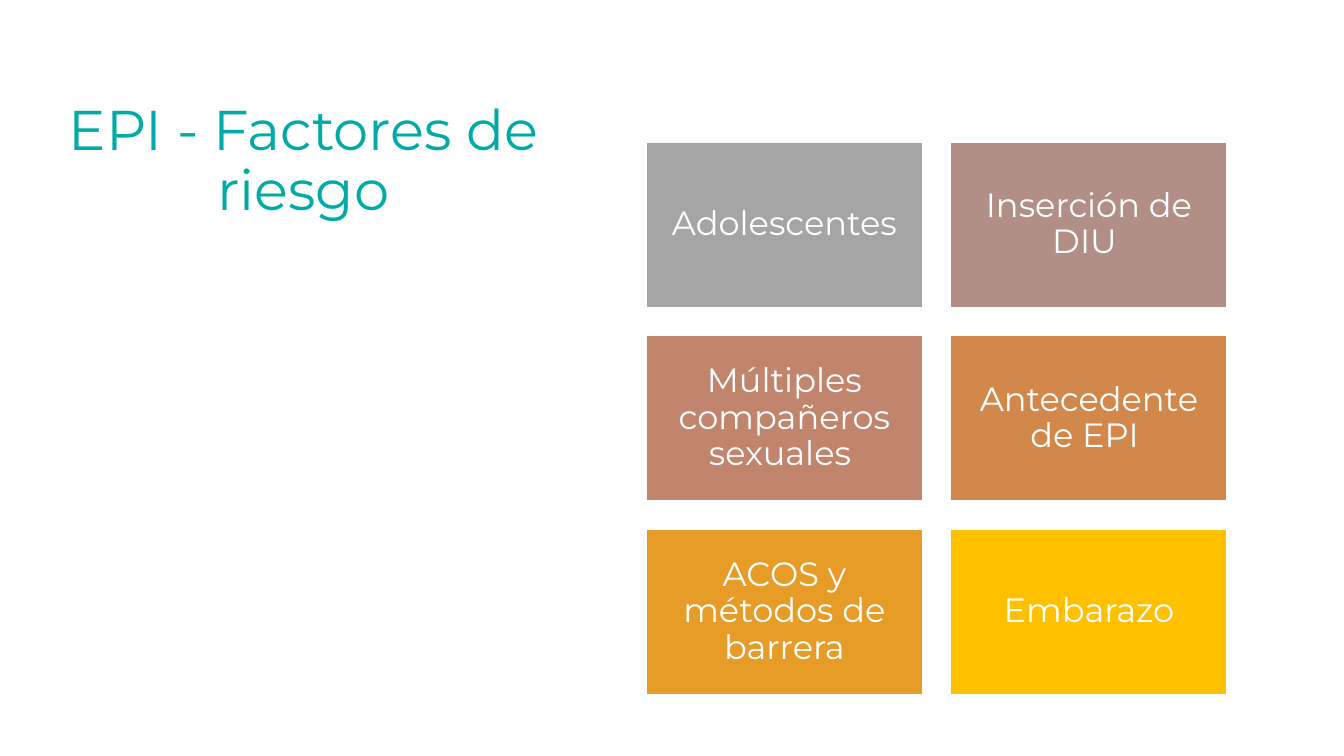
"""Build the slide on risk factors for EPI."""
import dataclasses

import pptx
import pptx.dml.color
import pptx.enum.shapes
import pptx.enum.text
import pptx.presentation
import pptx.slide
import pptx.text.text
import pptx.util

Inches = pptx.util.Inches


@dataclasses.dataclass(frozen=True)
class Theme:
    """Hold the colours, font and type sizes of the slide."""

    font: str = "Montserrat"
    heading: str = "00AAA7"
    white: str = "FFFFFF"
    heading_size: int = 40
    factor_size: int = 24
    line_spacing: float = 0.9


@dataclasses.dataclass(frozen=True)
class RiskFactor:
    """Describe one tile of the grid."""

    label: str
    fill: str


@dataclasses.dataclass(frozen=True)
class Grid:
    """Place tiles row by row, in inches."""

    left: float = 6.41
    top: float = 1.41
    width: float = 2.74
    height: float = 1.64
    gap: float = 0.28
    columns: int = 2


THEME = Theme()
GRID = Grid()
RISK_FACTORS = (
    RiskFactor("Adolescentes", "A5A5A5"),
    RiskFactor("Inserción de DIU ", "B18F87"),
    RiskFactor("Múltiples compañeros sexuales ", "C1846C"),
    RiskFactor("Antecedente de EPI ", "D1884A"),
    RiskFactor("ACOS y métodos de barrera", "E69C27"),
    RiskFactor("Embarazo", "FFC000"),
)


def rgb(code: str) -> pptx.dml.color.RGBColor:
    """Turn a hexadecimal code into a colour."""
    return pptx.dml.color.RGBColor.from_string(code)


def write(frame: pptx.text.text.TextFrame, text: str, size: int, color: str) -> None:
    """Write one centred paragraph in the middle of a frame."""
    frame.word_wrap = True
    frame.auto_size = pptx.enum.text.MSO_AUTO_SIZE.NONE
    frame.vertical_anchor = pptx.enum.text.MSO_ANCHOR.MIDDLE
    paragraph = frame.paragraphs[0]
    paragraph.alignment = pptx.enum.text.PP_ALIGN.CENTER
    paragraph.line_spacing = THEME.line_spacing
    paragraph.space_before = pptx.util.Pt(0)
    run = paragraph.add_run()
    run.text = text
    run.font.name = THEME.font
    run.font.size = pptx.util.Pt(size)
    run.font.color.rgb = rgb(color)


def add_heading(slide: pptx.slide.Slide) -> None:
    """Move the title placeholder and fill it."""
    heading = slide.shapes.title
    heading.left, heading.top = Inches(0.24), Inches(0.6)
    heading.width, heading.height = Inches(5.54), Inches(2.02)
    write(heading.text_frame, "EPI - Factores de riesgo", THEME.heading_size, THEME.heading)


def add_risk_factor(slide: pptx.slide.Slide, index: int, factor: RiskFactor) -> None:
    """Draw one tile at its place in the grid."""
    row, column = divmod(index, GRID.columns)
    tile = slide.shapes.add_shape(
        pptx.enum.shapes.MSO_SHAPE.RECTANGLE,
        Inches(GRID.left + column * (GRID.width + GRID.gap)),
        Inches(GRID.top + row * (GRID.height + GRID.gap)),
        Inches(GRID.width),
        Inches(GRID.height),
    )
    tile.shadow.inherit = False
    tile.fill.solid()
    tile.fill.fore_color.rgb = rgb(factor.fill)
    tile.line.color.rgb = rgb(THEME.white)
    tile.line.width = pptx.util.Pt(1)
    frame = tile.text_frame
    frame.margin_left = frame.margin_right = Inches(0.1)
    frame.margin_top = frame.margin_bottom = Inches(0.1)
    write(frame, factor.label, THEME.factor_size, THEME.white)


def main() -> None:
    """Create and save the presentation."""
    deck: pptx.presentation.Presentation = pptx.Presentation()
    deck.slide_width, deck.slide_height = Inches(13.33), Inches(7.5)
    slide = deck.slides.add_slide(deck.slide_layouts.get_by_name("Title Only"))
    slide.background.fill.solid()
    slide.background.fill.fore_color.rgb = rgb(THEME.white)
    add_heading(slide)
    for index, factor in enumerate(RISK_FACTORS):
        add_risk_factor(slide, index, factor)
    deck.save("out.pptx")


if __name__ == "__main__":
    main()
